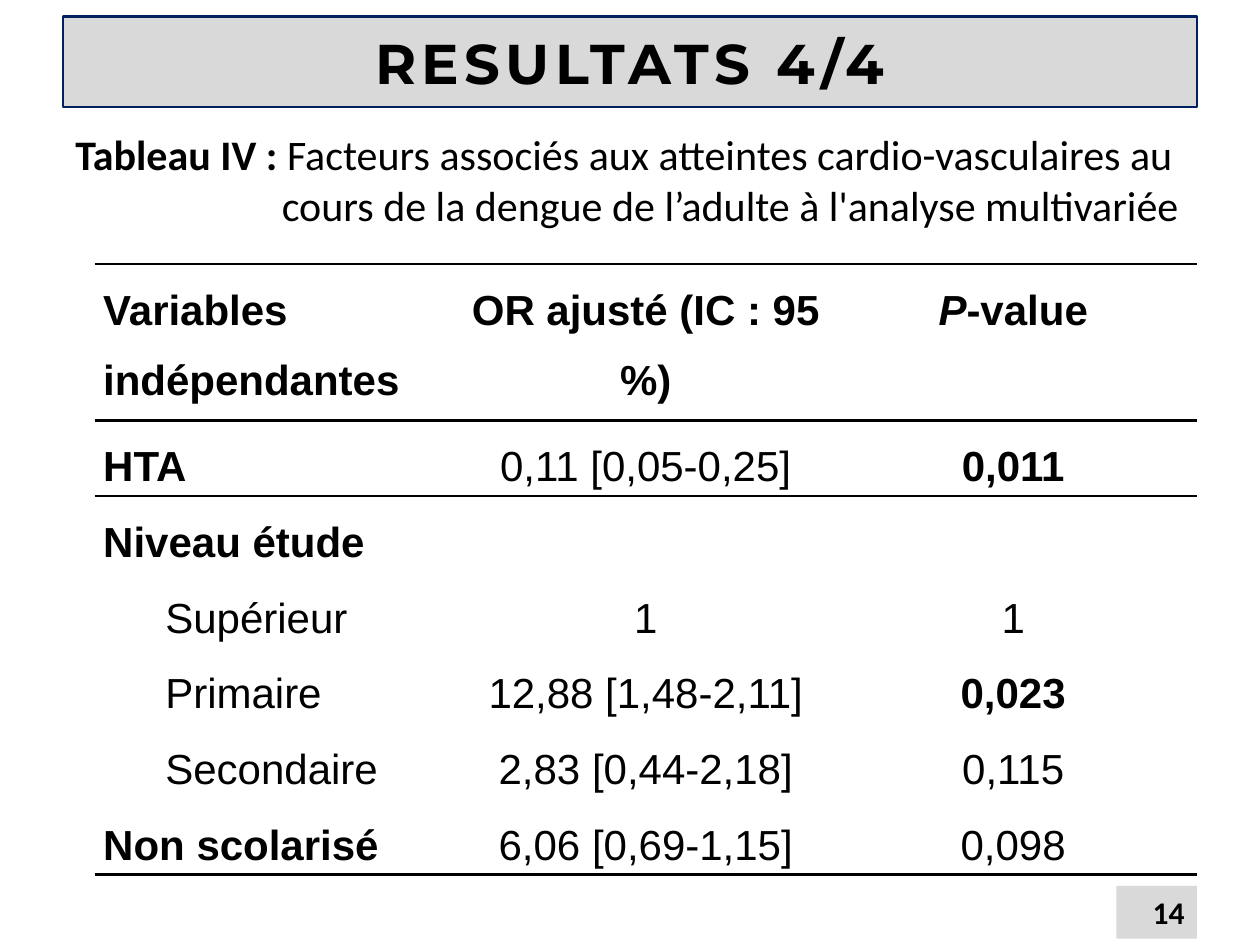
from lxml import etree
from pptx import Presentation
from pptx.dml.color import RGBColor
from pptx.enum import shapes, text
from pptx.oxml import ns
from pptx.util import Pt

BLACK = RGBColor(0, 0, 0)
GREY = RGBColor(0xD9, 0xD9, 0xD9)
NAVY = RGBColor(0, 0x20, 0x60)
PLAIN_TABLE = "{2D5ABB26-0587-4C30-8999-92F81FD0307C}"
LEFT, CENTER, RIGHT, JUSTIFY = (
    text.PP_ALIGN.LEFT, text.PP_ALIGN.CENTER, text.PP_ALIGN.RIGHT, text.PP_ALIGN.JUSTIFY)

TITLE = "RESULTATS 4/4"
PAGE_NUMBER = "14"
CAPTION_LABEL = "Tableau IV : "
CAPTION = ["Facteurs associés aux atteintes cardio-vasculaires au",
           "cours de la dengue de l’adulte à l'analyse multivariée"]
CAPTION_INDENT = 118
HEADER = ["Variables\nindépendantes", "OR ajusté (IC\u00a0: 95 %)", "P-value"]
ROWS = [
    ("HTA", "0,11 [0,05-0,25]", "0,011"),
    ("Niveau étude", "", ""),
    ("Supérieur", "1", "1"),
    ("Primaire", "12,88 [1,48-2,11]", "0,023"),
    ("Secondaire", "2,83 [0,44-2,18]", "0,115"),
    ("Non scolarisé", "6,06 [0,69-1,15]", "0,098"),
]
LEVELS = {"Supérieur", "Primaire", "Secondaire"}
SIGNIFICANT = {"0,011", "0,023"}
LEVEL_INDENT = 35.5
TABLE_LEFT, TABLE_TOP, COLUMN_WIDTH = 54, 151, 210
HEADER_HEIGHT, ROW_HEIGHT = 89.3, 41.8


def style(para, size, name, bold=None, align=LEFT):
    para.alignment = align
    font = para.font
    font.size, font.name, font.bold = Pt(size), name, bold
    font.color.rgb = BLACK


def add_span(para, words, **looks):
    span = para.add_run()
    span.text = words
    for look, value in looks.items():
        setattr(span.font, look, value)
    return span


def add_bar(page, frame, words, size, name, align):
    bar = page.shapes.add_shape(shapes.MSO_SHAPE.RECTANGLE, *map(Pt, frame))
    bar.shadow.inherit = False
    bar.fill.solid()
    bar.fill.fore_color.rgb = GREY
    bar.line.fill.background()
    bar.text_frame.vertical_anchor = text.MSO_ANCHOR.MIDDLE
    para = bar.text_frame.paragraphs[0]
    style(para, size, name, True, align)
    add_span(para, words)
    return bar


def add_caption(page):
    frame = page.shapes.add_textbox(Pt(36), Pt(70), Pt(648), Pt(65.5)).text_frame
    frame.word_wrap = True
    first, second = frame.paragraphs[0], frame.add_paragraph()
    for para, words in zip((first, second), CAPTION):
        style(para, 24, "Calibri")
        if para is first:
            add_span(para, CAPTION_LABEL, bold=True)
        add_span(para, words)
    second._p.get_or_add_pPr().set("marL", str(Pt(CAPTION_INDENT)))


def add_border(cell, side):
    line = etree.SubElement(cell._tc.get_or_add_tcPr(), ns.qn(f"a:ln{side}"), w=str(Pt(1.5)))
    fill = etree.SubElement(line, ns.qn("a:solidFill"))
    etree.SubElement(fill, ns.qn("a:srgbClr"), val=str(BLACK))


def fill_cell(cell, words, bold, align):
    cell.margin_left = cell.margin_right = Pt(5)
    cell.margin_top = cell.margin_bottom = 0
    for number, line in enumerate(words.split("\n")):
        frame = cell.text_frame
        para = frame.add_paragraph() if number else frame.paragraphs[0]
        style(para, 24, "Arial", bold, align)
        para.line_spacing = 1.5
        if line == "P-value":
            add_span(para, "P", italic=True)
            line = "-value"
        if line:
            add_span(para, line)
        if line in LEVELS:
            para._p.get_or_add_pPr().set("marL", str(Pt(LEVEL_INDENT)))


def add_results(page):
    rows = [HEADER, *ROWS]
    heights = [HEADER_HEIGHT] + [ROW_HEIGHT] * len(ROWS)
    table = page.shapes.add_table(
        len(rows), len(HEADER), Pt(TABLE_LEFT), Pt(TABLE_TOP),
        Pt(COLUMN_WIDTH * len(HEADER)), Pt(sum(heights))).table
    table.first_row = table.horz_banding = False
    table._tbl.tblPr[0].text = PLAIN_TABLE
    for column in table.columns:
        column.width = Pt(COLUMN_WIDTH)
    for r, values in enumerate(rows):
        table.rows[r].height = Pt(heights[r])
        for c, words in enumerate(values):
            cell = table.cell(r, c)
            bold = r == 0 or words in SIGNIFICANT or (c == 0 and words not in LEVELS)
            fill_cell(cell, words, bold, CENTER if c else JUSTIFY)
            if r in (0, 1):
                add_border(cell, "T")
            if r in (0, len(ROWS)):
                add_border(cell, "B")


def main():
    deck = Presentation()
    deck.slide_width, deck.slide_height = Pt(720), Pt(540)
    page = deck.slides.add_slide(deck.slide_layouts[6])
    title = add_bar(page, (36, 9.4, 648, 51.8), TITLE, 32, "Montserrat", CENTER)
    title.line.color.rgb = NAVY
    title.line.width = Pt(1.5)
    title.text_frame.paragraphs[0].runs[0].font._element.set("spc", "300")
    add_bar(page, (638, 506.2, 46, 30.2), PAGE_NUMBER, 18, "Calibri", RIGHT)
    add_caption(page)
    add_results(page)
    deck.save("out.pptx")


if __name__ == "__main__":
    main()
